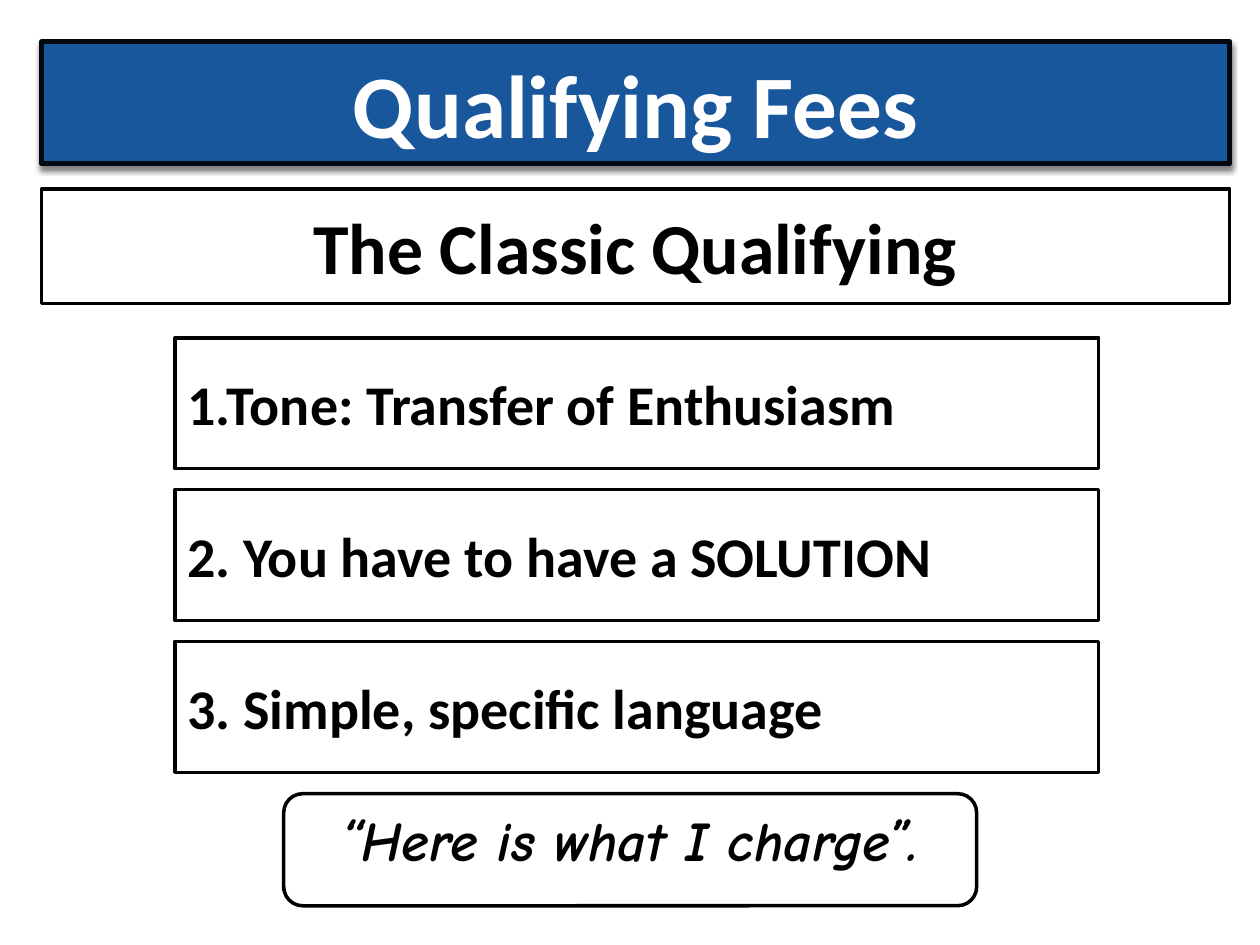
from lxml import etree
from pptx import Presentation
from pptx.dml.color import RGBColor
from pptx.enum.shapes import MSO_SHAPE
from pptx.enum.text import MSO_ANCHOR, MSO_AUTO_SIZE, PP_ALIGN
from pptx.oxml.ns import qn
from pptx.util import Cm, Pt

RECTANGLE = MSO_SHAPE.RECTANGLE
CALLOUT = MSO_SHAPE.ROUNDED_RECTANGULAR_CALLOUT
LEFT, CENTER = PP_ALIGN.LEFT, PP_ALIGN.CENTER
TOP, MIDDLE = MSO_ANCHOR.TOP, MSO_ANCHOR.MIDDLE
NO_AUTOFIT = MSO_AUTO_SIZE.NONE
TITLE_ONLY = 5
BLACK, WHITE, BLUE, NAVY = "000000", "FFFFFF", "18579B", "02080F"
BANNER_LEFT, BANNER_WIDTH = 0.84, 23.95
POINT_TOP, POINT_PITCH = 6.81, 3.06
POINTS = (
    "1.Tone: Transfer of Enthusiasm",
    "2. You have to have a SOLUTION",
    "3. Simple, specific language",
)


def color(value):
    """Return the colour for a hex string."""
    return RGBColor.from_string(value)


def place(box, left, top, width, height):
    """Set the position and size of a box in centimetres."""
    box.left, box.top = Cm(left), Cm(top)
    box.width, box.height = Cm(width), Cm(height)


def paint(box, fill=WHITE, line=BLACK, weight=2):
    """Give a box its fill and outline without a shadow."""
    box.shadow.inherit = False
    box.fill.solid()
    box.fill.fore_color.rgb = color(fill)
    box.line.color.rgb = color(line)
    box.line.width = Pt(weight)


def write(box, text, size, ink=BLACK, align=CENTER, anchor=MIDDLE,
          font="Calibri", italic=False):
    """Write one bold line of text in a box."""
    frame = box.text_frame
    frame.word_wrap = True
    frame.auto_size = NO_AUTOFIT
    frame.vertical_anchor = anchor
    para = frame.paragraphs[0]
    para.alignment = align
    span = para.add_run()
    span.text = text
    span.font.name = font
    span.font.size = Pt(size)
    span.font.bold = True
    span.font.italic = italic
    span.font.color.rgb = color(ink)


def add_drop_shadow(box):
    """Add a soft black shadow below a box."""
    effects = box.element.spPr.find(qn("a:effectLst"))
    shadow = etree.SubElement(
        effects, qn("a:outerShdw"), blurRad=str(Pt(3)), dist=str(Pt(2)),
        dir="5400000", rotWithShape="0")
    tint = etree.SubElement(shadow, qn("a:srgbClr"), val=BLACK)
    etree.SubElement(tint, qn("a:alpha"), val="50000")


def add_title(page, text):
    """Turn the title placeholder into the blue banner."""
    box = page.shapes.title
    place(box, BANNER_LEFT, 0.84, BANNER_WIDTH, 2.46)
    paint(box, BLUE, NAVY, 3)
    add_drop_shadow(box)
    write(box, text, 51, WHITE)


def add_box(page, kind, left, top, width, height):
    """Add a white box with a black outline."""
    box = page.shapes.add_shape(kind, 0, 0, 0, 0)
    place(box, left, top, width, height)
    paint(box)
    return box


def add_quote(page, text):
    """Add the rounded callout with the spoken line."""
    box = add_box(page, CALLOUT, 5.72, 16, 13.97, 2.26)
    for index, value in enumerate((-0.5, 0.36, 0.17)):
        box.adjustments[index] = value
    write(box, text, 32, anchor=TOP, font="Comic Neue", italic=True)


def main():
    """Build the slide and save the deck."""
    deck = Presentation()
    deck.slide_width, deck.slide_height = Cm(25.4), Cm(19.05)
    page = deck.slides.add_slide(deck.slide_layouts[TITLE_ONLY])
    add_title(page, "Qualifying Fees")
    subtitle = add_box(page, RECTANGLE, BANNER_LEFT, 3.81, BANNER_WIDTH, 2.31)
    write(subtitle, "The Classic Qualifying", 41)
    for index, text in enumerate(POINTS):
        top = POINT_TOP + index * POINT_PITCH
        point = add_box(page, RECTANGLE, 3.53, top, 18.62, 2.64)
        write(point, text, 32, align=LEFT)
    add_quote(page, "“Here is what I charge”.")
    deck.save("out.pptx")


if __name__ == "__main__":
    main()
